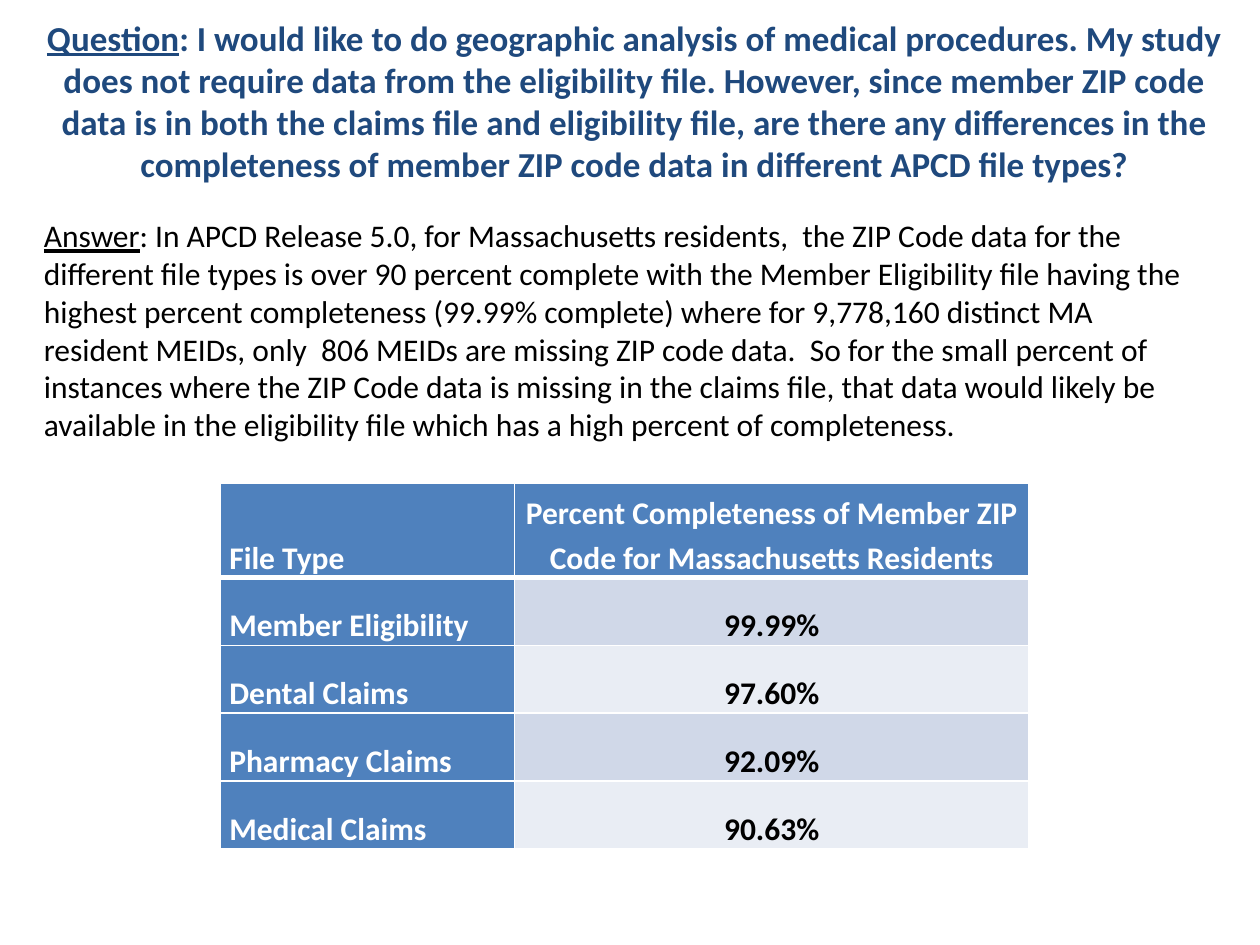
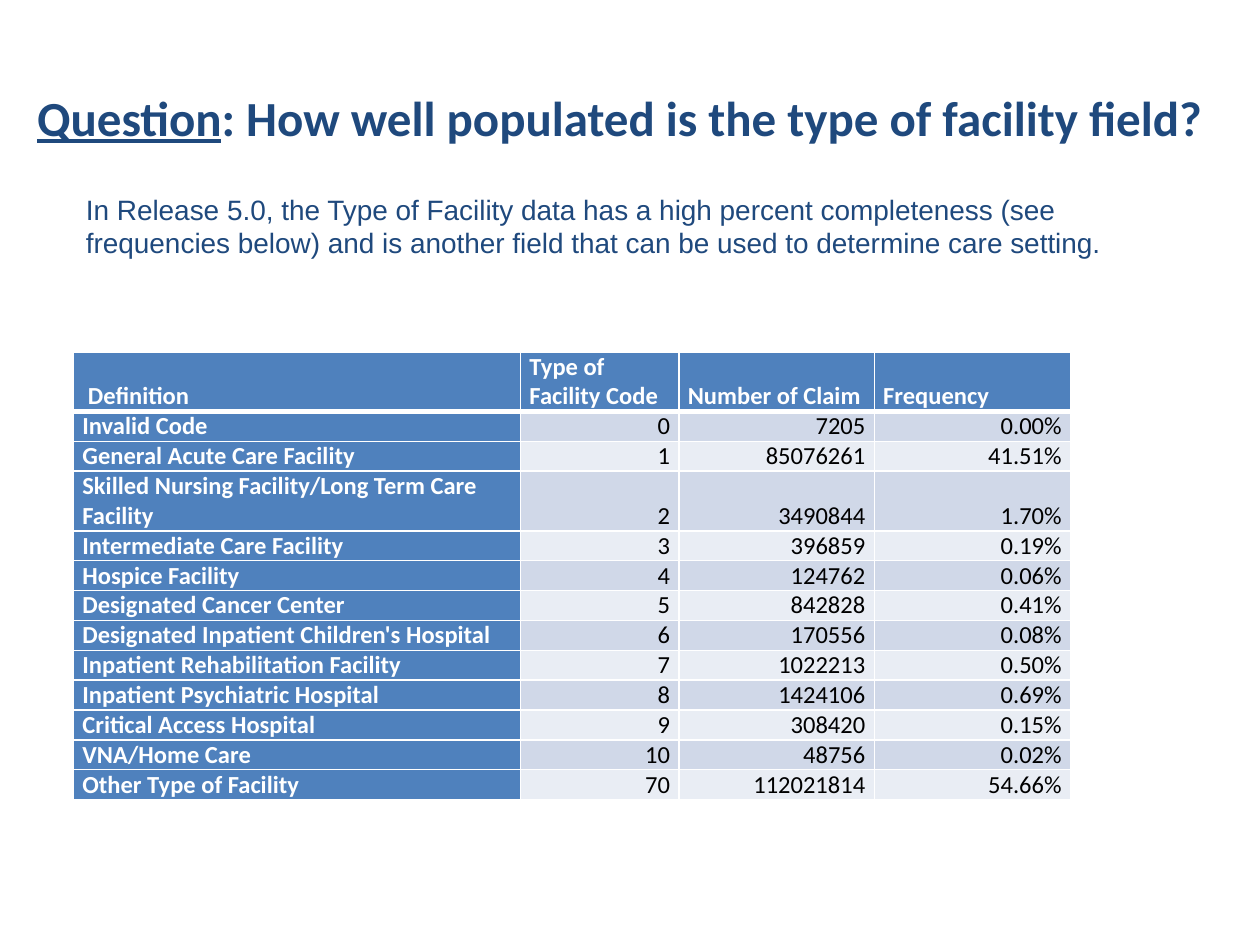
"""Build two question-and-answer slides about data completeness."""
from lxml.etree import SubElement
from pptx import Presentation
from pptx.dml.color import RGBColor
from pptx.enum.text import MSO_ANCHOR as Anchor, MSO_AUTO_SIZE as AutoSize, PP_ALIGN as Align
from pptx.oxml.ns import qn
from pptx.util import Pt

COLORS = {
    "title": "1F497D",
    "text": "000000",
    "white": "FFFFFF",
    "header": "4F81BD",
    "odd": "D0D8E8",
    "even": "E9EDF4",
}
TITLE_ONLY = 5
CELL_INSET = 5.1
THIN, THICK = 1, 3

SLIDES = [
    {
        "title": (
            "Question",
            ": I would like to do geographic analysis of medical procedures. My study does not "
            "require data from the eligibility file. However, since member ZIP code data is in "
            "both the claims file and eligibility file, are there any differences in the "
            "completeness of member ZIP code data in different APCD file types?",
        ),
        "title_box": (10.8, 12.24, 703.44, 90),
        "title_size": 20,
        "answer": (
            "Answer",
            ": In APCD Release 5.0, for Massachusetts residents,  the ZIP Code data for the "
            "different file types is over 90 percent complete with the Member Eligibility file "
            "having the highest percent completeness (99.99% complete) where for 9,778,160 "
            "distinct MA resident MEIDs, only  806 MEIDs are missing ZIP code data.  So for the "
            "small percent of instances where the ZIP Code data is missing in the claims file, "
            "that data would likely be available in the eligibility file which has a high "
            "percent of completeness.",
        ),
        "answer_box": (18, 120, 678, 138.24),
        "answer_font": (18, "Calibri", "text"),
        "answer_anchor": Anchor.TOP,
        "table": {
            "origin": (126, 276),
            "columns": (168, 294),
            "header_height": 54,
            "row_height": 38.8,
            "size": 18,
            "line_spacing": 1.15,
            "header_align": Align.CENTER,
            "value_align": Align.CENTER,
            "bold_values": True,
            "rows": [
                ("File Type",
                 "Percent Completeness of Member ZIP Code for Massachusetts Residents"),
                ("Member Eligibility", "99.99%"),
                ("Dental Claims", "97.60%"),
                ("Pharmacy Claims", "92.09%"),
                ("Medical Claims", "90.63%"),
            ],
        },
    },
    {
        "title": ("Question", ": How well populated is the type of facility field?"),
        "title_box": (-12.24, 21.6, 732.24, 90),
        "title_size": 28,
        "answer": (
            "",
            "In Release 5.0, the Type of Facility data has a high percent completeness (see "
            "frequencies below) and is another field that can be used to determine care setting.",
        ),
        "answer_box": (42, 106, 631.44, 46),
        "answer_font": (16, "Arial", "title"),
        "answer_anchor": Anchor.MIDDLE,
        "table": {
            "origin": (42, 201),
            "columns": (255.5, 90.5, 111.6, 112.2),
            "header_height": 15,
            "row_height": 15,
            "size": 14,
            "line_spacing": 1.0,
            "header_align": Align.LEFT,
            "value_align": Align.RIGHT,
            "bold_values": False,
            "rows": [
                (" Definition", "Type of Facility Code", "Number of Claim", "Frequency"),
                ("Invalid Code", "0", "7205", "0.00%"),
                ("General Acute Care Facility", "1", "85076261", "41.51%"),
                ("Skilled Nursing Facility/Long Term Care Facility", "2", "3490844", "1.70%"),
                ("Intermediate Care Facility", "3", "396859", "0.19%"),
                ("Hospice Facility", "4", "124762", "0.06%"),
                ("Designated Cancer Center", "5", "842828", "0.41%"),
                ("Designated Inpatient Children's Hospital", "6", "170556", "0.08%"),
                ("Inpatient Rehabilitation Facility", "7", "1022213", "0.50%"),
                ("Inpatient Psychiatric Hospital", "8", "1424106", "0.69%"),
                ("Critical Access Hospital", "9", "308420", "0.15%"),
                ("VNA/Home Care", "10", "48756", "0.02%"),
                ("Other Type of Facility", "70", "112021814", "54.66%"),
            ],
        },
    },
]


def rgb(name):
    return RGBColor.from_string(COLORS[name])


def style_font(paragraph, size, family, color, bold=False):
    font = paragraph.font
    font.size, font.name, font.bold = Pt(size), family, bold
    font.color.rgb = rgb(color)


def write_labelled(paragraph, label, body):
    if label:
        run = paragraph.add_run()
        run.text = label
        run.font.underline = True
    paragraph.add_run().text = body


def add_title(slide, content):
    title = slide.shapes.title
    title.left, title.top, title.width, title.height = map(Pt, content["title_box"])
    frame = title.text_frame
    frame.auto_size = AutoSize.NONE
    frame.vertical_anchor = Anchor.MIDDLE
    paragraph = frame.paragraphs[0]
    paragraph.alignment = Align.CENTER
    style_font(paragraph, content["title_size"], "Calibri", "title", bold=True)
    write_labelled(paragraph, *content["title"])


def add_answer(slide, content):
    frame = slide.shapes.add_textbox(*map(Pt, content["answer_box"])).text_frame
    frame.word_wrap = True
    frame.auto_size = AutoSize.SHAPE_TO_FIT_TEXT
    frame.vertical_anchor = content["answer_anchor"]
    paragraph = frame.paragraphs[0]
    style_font(paragraph, *content["answer_font"])
    write_labelled(paragraph, *content["answer"])


def set_borders(cell, row_index):
    widths = {
        "a:lnL": THIN,
        "a:lnR": THIN,
        "a:lnT": THICK if row_index == 1 else THIN,
        "a:lnB": THICK if row_index == 0 else THIN,
    }
    properties = cell._tc.get_or_add_tcPr()
    for tag, width in widths.items():
        line = SubElement(properties, qn(tag), w=str(Pt(width)))
        fill = SubElement(line, qn("a:solidFill"))
        SubElement(fill, qn("a:srgbClr"), val=COLORS["white"])


def fill_cell(cell, text, row_index, column_index, layout):
    is_header = row_index == 0
    is_label = is_header or column_index == 0
    set_borders(cell, row_index)
    cell.fill.solid()
    band = "odd" if row_index % 2 else "even"
    cell.fill.fore_color.rgb = rgb("header" if is_label else band)
    cell.margin_left = cell.margin_right = Pt(CELL_INSET)
    cell.margin_top = cell.margin_bottom = 0
    cell.vertical_anchor = Anchor.BOTTOM
    cell.text = text
    paragraph = cell.text_frame.paragraphs[0]
    paragraph.line_spacing = layout["line_spacing"]
    if column_index == 0:
        paragraph.alignment = Align.LEFT
    else:
        paragraph.alignment = layout["header_align" if is_header else "value_align"]
    style_font(paragraph, layout["size"], "Calibri", "white" if is_label else "text",
               bold=is_label or layout["bold_values"])


def add_data_table(slide, layout):
    rows, columns = layout["rows"], layout["columns"]
    heights = [layout["header_height"]] + [layout["row_height"]] * (len(rows) - 1)
    box = (*layout["origin"], sum(columns), sum(heights))
    table = slide.shapes.add_table(len(rows), len(columns), *map(Pt, box)).table
    for column, width in zip(table.columns, columns):
        column.width = Pt(width)
    for row_index, (values, height) in enumerate(zip(rows, heights)):
        table.rows[row_index].height = Pt(height)
        for column_index, text in enumerate(values):
            fill_cell(table.cell(row_index, column_index), text, row_index, column_index, layout)


def main():
    presentation = Presentation()
    presentation.slide_width, presentation.slide_height = Pt(720), Pt(540)
    for content in SLIDES:
        slide = presentation.slides.add_slide(presentation.slide_layouts[TITLE_ONLY])
        add_title(slide, content)
        add_data_table(slide, content["table"])
        add_answer(slide, content)
    presentation.save("out.pptx")


if __name__ == "__main__":
    main()
